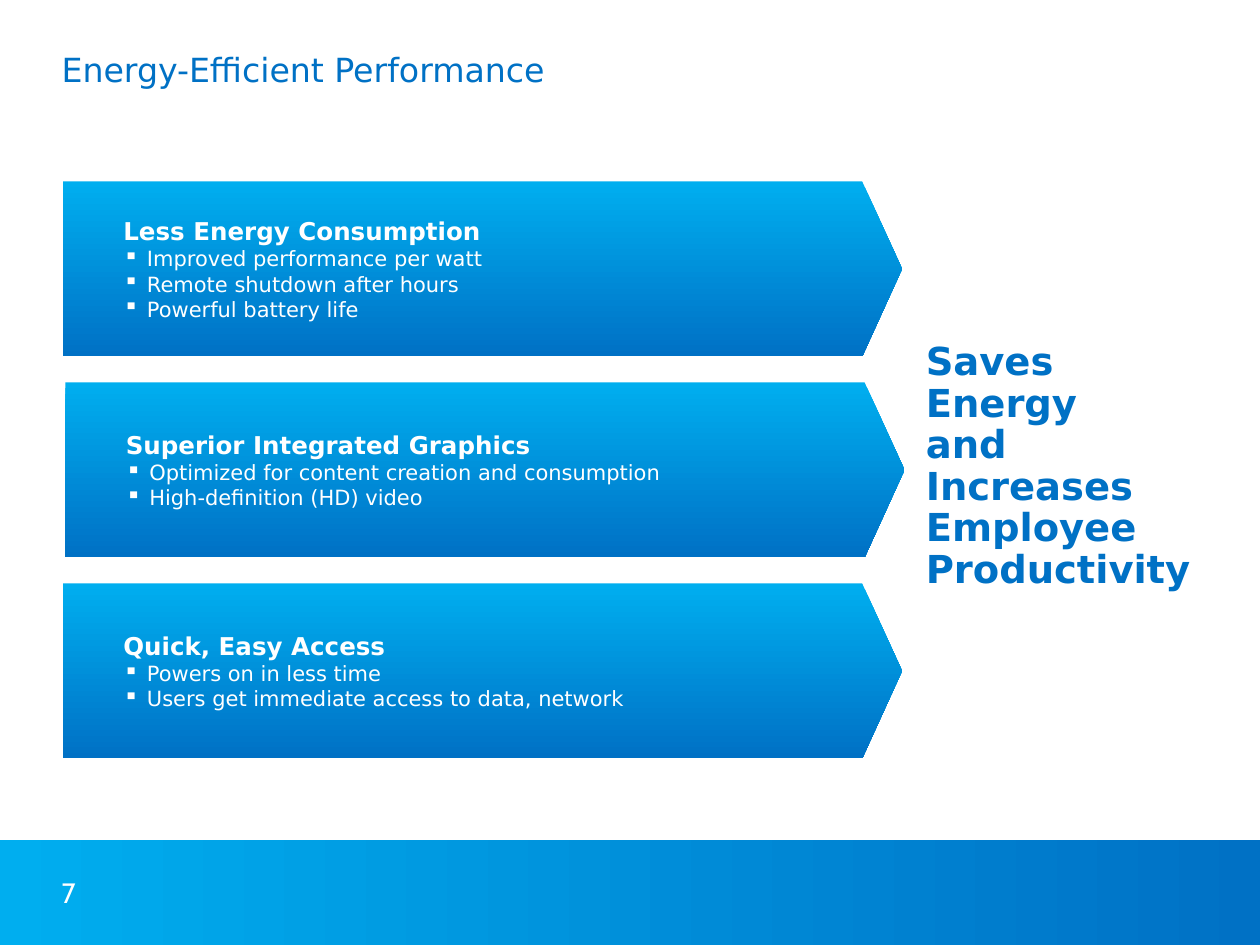
from lxml import etree
from pptx import Presentation
from pptx.dml.color import RGBColor
from pptx.enum.shapes import MSO_SHAPE
from pptx.enum.text import MSO_ANCHOR, MSO_AUTO_SIZE
from pptx.oxml.ns import qn
from pptx.util import Pt

RECTANGLE, PENTAGON = MSO_SHAPE.RECTANGLE, MSO_SHAPE.PENTAGON
TOP, MIDDLE = MSO_ANCHOR.TOP, MSO_ANCHOR.MIDDLE
GROW = MSO_AUTO_SIZE.SHAPE_TO_FIT_TEXT

COLORS = {"sky": "00AEEF", "blue": "0071C5", "white": "FFFFFF"}
FONT = "DejaVu Sans"

ARROW_TOP, ARROW_PITCH = 103.7, 114.85
ARROW_WIDTH, ARROW_HEIGHT = 479.5, 100
LABEL_INDENT, LABEL_WIDTH = 27.4, 326.2
BULLET_INDENT = 13.5

BENEFITS = [
    (36, "Less Energy Consumption",
     ["Improved performance per watt", "Remote shutdown after hours",
      "Powerful battery life"]),
    (37.4, "Superior Integrated Graphics",
     ["Optimized for content creation and consumption",
      "High-definition (HD) video"]),
    (36, "Quick, Easy Access",
     ["Powers on in less time",
      "Users get immediate access to data, network"]),
]


def add_gradient_shape(page, kind, left, top, width, height, angle):
    shape = page.shapes.add_shape(kind, Pt(left), Pt(top), Pt(width), Pt(height))
    shape.shadow.inherit = False
    shape.line.fill.background()
    shape.fill.gradient()
    shape.fill.gradient_angle = angle
    for stop, name in zip(shape.fill.gradient_stops, ("sky", "blue")):
        stop.color.rgb = RGBColor.from_string(COLORS[name])
    return shape


def add_box(page, left, top, width, height, anchor=TOP, wrap=True, grow=False):
    box = page.shapes.add_textbox(Pt(left), Pt(top), Pt(width), Pt(height))
    frame = box.text_frame
    frame.word_wrap = wrap
    frame.vertical_anchor = anchor
    if grow:
        frame.auto_size = GROW
    return frame


def set_bullet(para):
    properties = para._p.get_or_add_pPr()
    properties.set("marL", str(Pt(BULLET_INDENT)))
    properties.set("indent", str(-Pt(BULLET_INDENT)))
    etree.SubElement(properties, qn("a:buChar")).set("char", "▪")


def write(frame, text, size, color="white", font=FONT, bold=False,
          bullet=False, spacing=None):
    first = frame.paragraphs[0]
    para = frame.add_paragraph() if first.runs else first
    para.text = text
    if spacing:
        para.line_spacing = spacing
    if bullet:
        set_bullet(para)
    for span in para.runs:
        span.font.size = Pt(size)
        span.font.name = font
        span.font.bold = bold
        span.font.color.rgb = RGBColor.from_string(COLORS[color])


def add_benefit(page, left, top, heading, points):
    arrow = add_gradient_shape(page, PENTAGON, left, top,
                               ARROW_WIDTH, ARROW_HEIGHT, 270)
    arrow.adjustments[0] = 0.228
    height = 25 + 14.2 * len(points)
    frame = add_box(page, left + LABEL_INDENT, top + (ARROW_HEIGHT - height) / 2,
                    LABEL_WIDTH, height, anchor=MIDDLE, grow=True)
    write(frame, heading, 14, bold=True)
    for point in points:
        write(frame, point, 12, bullet=True)


def main():
    deck = Presentation()
    deck.slide_width, deck.slide_height = Pt(720), Pt(540)
    page = deck.slides.add_slide(deck.slide_layouts[6])

    add_gradient_shape(page, RECTANGLE, 0, 480, 720, 60, 0)
    title = add_box(page, 28.1, 24.5, 539.3, 50.4)
    write(title, "Energy-Efficient Performance", 19, color="blue")
    number = add_box(page, 28.1, 502.5, 33.8, 15.1, anchor=MIDDLE, wrap=False)
    write(number, "7", 16, font="Cabin")

    for row, (left, heading, points) in enumerate(BENEFITS):
        add_benefit(page, left, ARROW_TOP + row * ARROW_PITCH, heading, points)

    outcome = add_box(page, 522, 192.2, 167.8, 151.2, grow=True)
    for text in ("Saves Energy\vand", "Increases Employee Productivity"):
        write(outcome, text, 22, color="blue", bold=True, spacing=0.9)

    deck.save("out.pptx")


if __name__ == "__main__":
    main()
